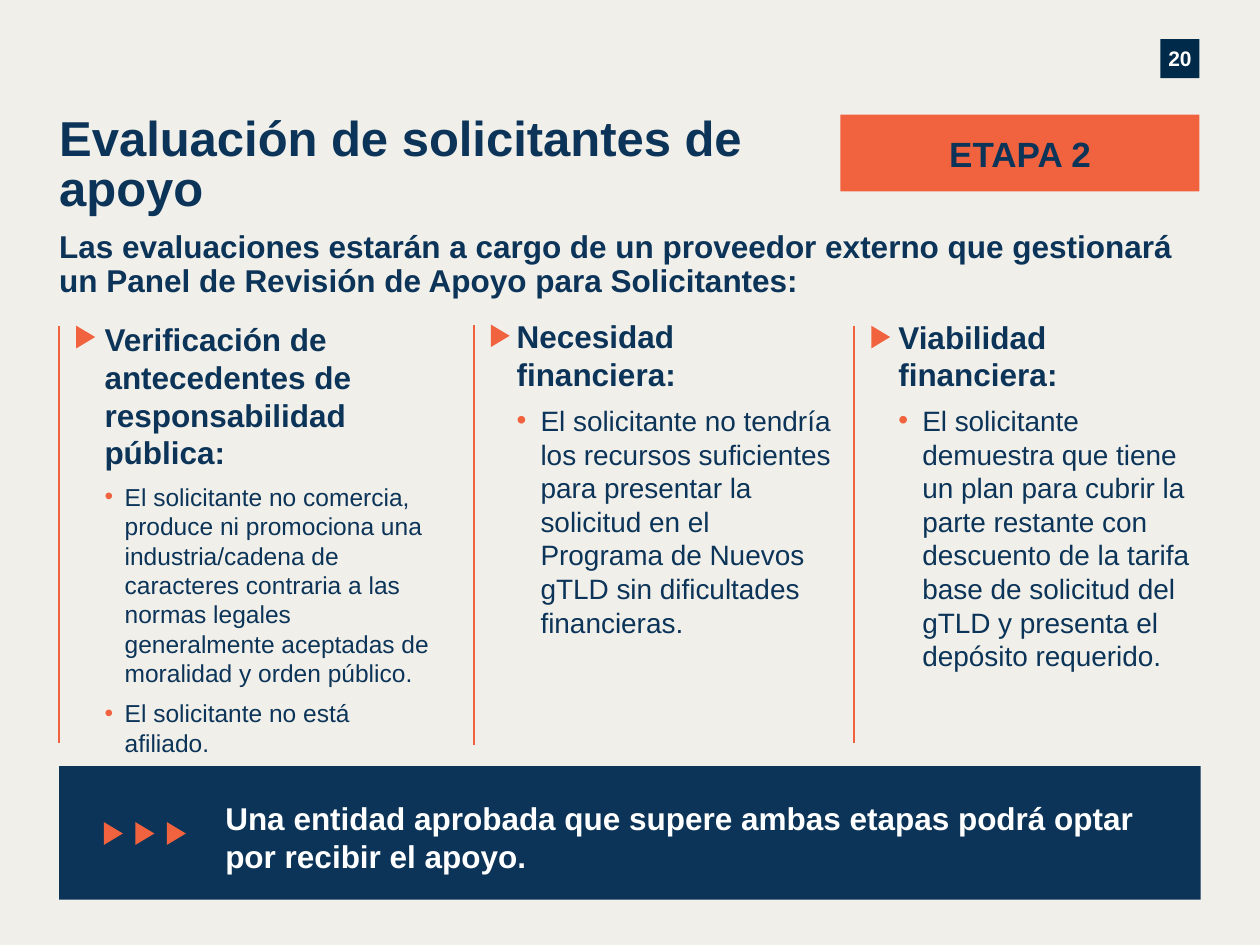
import pptx
import pptx.util
import pptx.dml.color
import pptx.enum.shapes
import pptx.enum.text
import pptx.oxml
import lxml.etree

Inches = pptx.util.Inches
Pt = pptx.util.Pt
RGBColor = pptx.dml.color.RGBColor
SHAPES = pptx.enum.shapes.MSO_SHAPE
ALIGN = pptx.enum.text.PP_ALIGN
ANCHOR = pptx.enum.text.MSO_ANCHOR

CREAM = RGBColor(0xF1, 0xEF, 0xEA)
NAVY = RGBColor(0x0B, 0x34, 0x58)
DARK_NAVY = RGBColor(0x00, 0x2A, 0x49)
ORANGE = RGBColor(0xF1, 0x63, 0x3E)
WHITE = RGBColor(0xFF, 0xFF, 0xFF)

LEFT, WIDTH = 0.47, 9.06

COLUMNS = [
    {"box": (0.47, 2.59, 3.0, 3.31), "indent": 0.36, "text_offset": -0.05,
     "heading": "Verificación de antecedentes de responsabilidad pública:",
     "size": 14, "hanging": 0.16,
     "bullets": [
         "El solicitante no comercia, produce ni promociona una industria/cadena "
         "de caracteres contraria a las normas legales generalmente aceptadas de "
         "moralidad y orden público.",
         "El solicitante no está afiliado."]},
    {"box": (3.76, 2.58, 2.85, 3.33), "indent": 0.34, "text_offset": -0.06,
     "heading": "Necesidad financiera:",
     "size": 16, "hanging": 0.19,
     "bullets": [
         "El solicitante no tendría los recursos suficientes para presentar la "
         "solicitud en el Programa de Nuevos gTLD sin dificultades financieras."]},
    {"box": (6.78, 2.59, 2.75, 3.31), "indent": 0.35, "text_offset": -0.07,
     "heading": "Viabilidad financiera:",
     "size": 16, "hanging": 0.19,
     "bullets": [
         "El solicitante demuestra que tiene un plan para cubrir la parte restante "
         "con descuento de la tarifa base de solicitud del gTLD y presenta el "
         "depósito requerido."]},
]


def set_attributes(target, values):
    for name, value in values.items():
        setattr(target, name, value)


def prepare_frame(frame, inset=0, anchor=ANCHOR.TOP):
    margin = Inches(inset)
    set_attributes(frame, {
        "margin_left": margin, "margin_top": margin, "margin_right": margin,
        "margin_bottom": margin, "word_wrap": True, "vertical_anchor": anchor})


def write_paragraph(paragraph, text, size, color=NAVY, bold=True, **layout):
    run = paragraph.add_run()
    run.text = text
    set_attributes(paragraph, layout)
    set_attributes(run.font, {"name": "Arial", "size": Pt(size), "bold": bold})
    run.font.color.rgb = color


def add_filled(slide, kind, box, color):
    shape = slide.shapes.add_shape(kind, *map(Inches, box))
    shape.shadow.inherit = False
    shape.fill.solid()
    shape.fill.fore_color.rgb = color
    shape.line.fill.background()
    return shape


def add_label(slide, box, fill, text, size, color):
    shape = add_filled(slide, SHAPES.RECTANGLE, box, fill)
    prepare_frame(shape.text_frame, anchor=ANCHOR.MIDDLE)
    write_paragraph(shape.text_frame.paragraphs[0], text, size, color,
                    alignment=ALIGN.CENTER)


def add_text(slide, box, text, size, color=NAVY, inset=0, **layout):
    frame = slide.shapes.add_textbox(*map(Inches, box)).text_frame
    prepare_frame(frame, inset)
    write_paragraph(frame.paragraphs[0], text, size, color, **layout)
    return frame


def add_arrow(slide, left, top):
    shape = add_filled(slide, SHAPES.ISOSCELES_TRIANGLE, (left, top, 0.18, 0.15), ORANGE)
    shape.rotation = 90


def add_rule(slide, x, top, bottom):
    line = slide.shapes.add_connector(
        pptx.enum.shapes.MSO_CONNECTOR.STRAIGHT,
        Inches(x), Inches(top), Inches(x), Inches(bottom))
    line.line.color.rgb = ORANGE
    line.line.width = Pt(1.25)
    lxml.etree.SubElement(line._element.spPr, pptx.oxml.ns.qn("a:effectLst"))


def add_bullet(paragraph, hanging):
    properties = paragraph._p.get_or_add_pPr()
    properties.set("marL", str(Inches(hanging)))
    properties.set("indent", str(-Inches(hanging)))
    qn = pptx.oxml.ns.qn
    color = lxml.etree.SubElement(properties, qn("a:buClr"))
    lxml.etree.SubElement(color, qn("a:srgbClr")).set("val", str(ORANGE))
    lxml.etree.SubElement(properties, qn("a:buFont")).set("typeface", "Arial")
    lxml.etree.SubElement(properties, qn("a:buChar")).set("char", "•")


def build_header(slide, left, top, width):
    right = left + width
    add_label(slide, (right - 0.32, top, 0.31, 0.31), DARK_NAVY, "20", 12, WHITE)
    add_text(slide, (left, top + 0.61, 5.88, 0.5),
             "Evaluación de solicitantes de apoyo", 28, line_spacing=Pt(28.6))
    add_label(slide, (right - 2.86, top + 0.6, 2.85, 0.61), ORANGE, "ETAPA 2", 20, NAVY)
    add_text(slide, (left, top + 1.52, width, 0.63),
             "Las evaluaciones estarán a cargo de un proveedor externo que gestionará "
             "un Panel de Revisión de Apoyo para Solicitantes:", 18,
             line_spacing=Pt(19.6))


def build_column(slide, box, indent, text_offset, heading, size, hanging, bullets):
    left, top, width, height = box
    add_rule(slide, left, top, top + height)
    add_arrow(slide, left + 0.12, top + 0.01)
    frame = add_text(slide, (left + indent, top + text_offset, width - indent, height),
                     heading, 18)
    for bullet in bullets:
        paragraph = frame.add_paragraph()
        add_bullet(paragraph, hanging)
        write_paragraph(paragraph, bullet, size, bold=False, space_before=Pt(6))
    paragraph.space_after = Pt(6)


def build_conclusion(slide, left, top, width, height):
    add_filled(slide, SHAPES.RECTANGLE, (left, top, width, height), NAVY)
    for index in range(3):
        add_arrow(slide, left + 0.34 + 0.25 * index, top + 0.46)
    add_text(slide, (left + 1.22, top + 0.16, 7.56, 0.8),
             "Una entidad aprobada que supere ambas etapas podrá optar por recibir "
             "el apoyo.", 18, WHITE, inset=0.1)


def main():
    presentation = pptx.Presentation()
    presentation.slide_width = Inches(10)
    presentation.slide_height = Inches(7.5)
    slide = presentation.slides.add_slide(presentation.slide_layouts[6])
    slide.background.fill.solid()
    slide.background.fill.fore_color.rgb = CREAM
    build_header(slide, LEFT, 0.31, WIDTH)
    for column in COLUMNS:
        build_column(slide, **column)
    build_conclusion(slide, LEFT, 6.08, WIDTH, 1.06)
    presentation.save("out.pptx")


if __name__ == "__main__":
    main()
